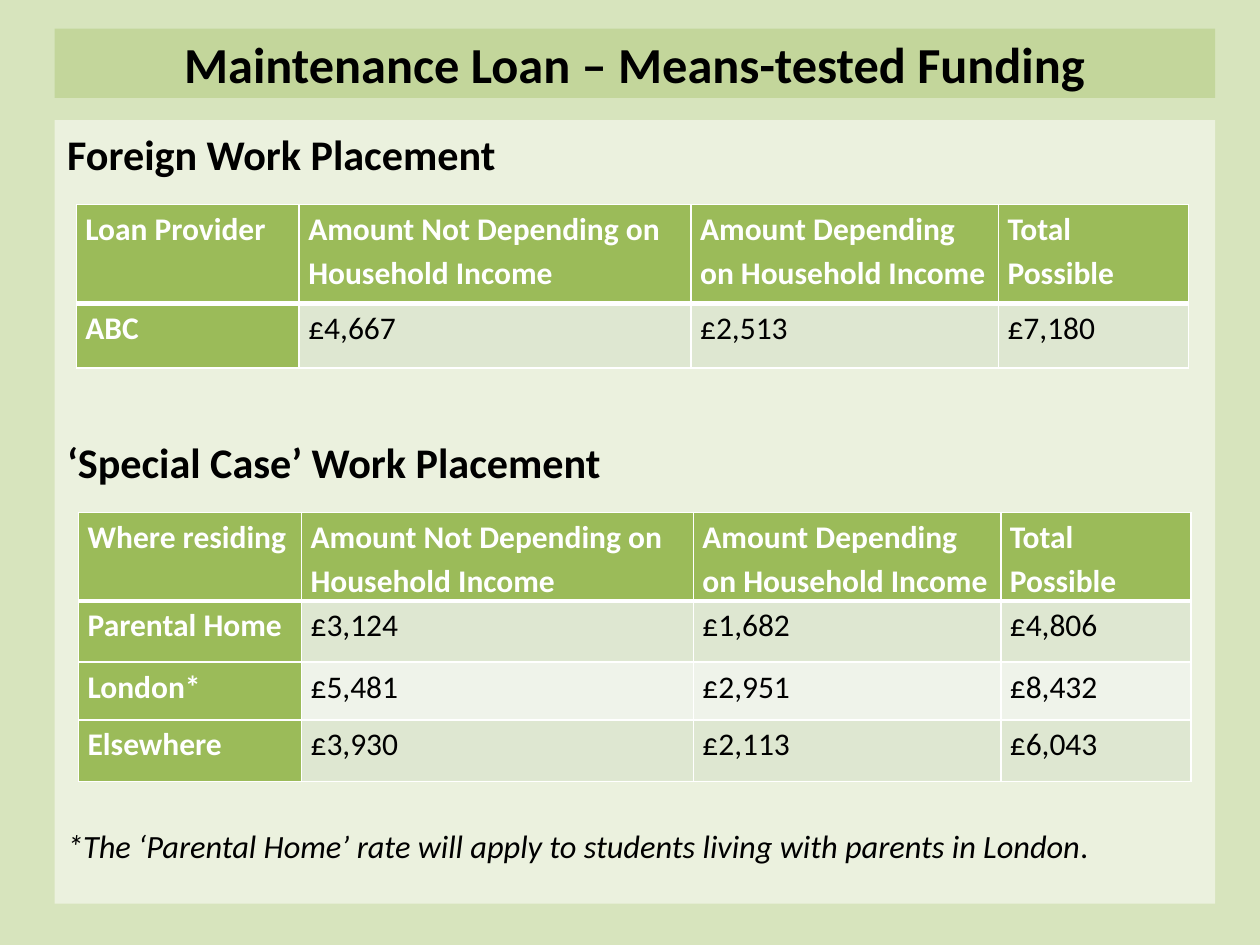
from dataclasses import dataclass

from lxml import etree
from pptx import Presentation
from pptx.dml.color import RGBColor
from pptx.enum.shapes import MSO_SHAPE
from pptx.enum.text import MSO_ANCHOR, PP_ALIGN
from pptx.oxml.ns import qn
from pptx.util import Pt

RECT = MSO_SHAPE.RECTANGLE
TOP, MIDDLE = MSO_ANCHOR.TOP, MSO_ANCHOR.MIDDLE
LEFT, CENTER = PP_ALIGN.LEFT, PP_ALIGN.CENTER

BLACK = RGBColor(0x00, 0x00, 0x00)
WHITE = RGBColor(0xFF, 0xFF, 0xFF)
BACKGROUND = RGBColor(0xD7, 0xE4, 0xBD)
TITLE_FILL = RGBColor(0xC3, 0xD6, 0x9B)
PANEL_FILL = RGBColor(0xEB, 0xF1, 0xDE)
GREEN = RGBColor(0x9B, 0xBB, 0x59)
BANDS = (RGBColor(0xDE, 0xE7, 0xD1), RGBColor(0xEF, 0xF3, 0xEA))

FONT = "Calibri"
COL_WIDTHS = (127.4, 223.9, 175.7, 108.7)
AMOUNT_HEADINGS = (
    "Amount Not Depending on Household Income",
    "Amount Depending on Household Income",
    "Total Possible",
)


@dataclass
class Run:
    text: str
    size: float
    bold: bool = False
    italic: bool = False
    color: RGBColor = BLACK


@dataclass
class Para:
    runs: list[Run]
    before: float = 0
    spacing: float = 1.0
    align: PP_ALIGN = LEFT


@dataclass
class Panel:
    top: float
    height: float
    fill: RGBColor
    anchor: MSO_ANCHOR
    paras: list[Para]


@dataclass
class LoanTable:
    left: float
    top: float
    heights: tuple[float, ...]
    corner: str
    rows: list[tuple[str, ...]]


PANELS = [
    Panel(16.4, 39.6, TITLE_FILL, MIDDLE, [
        Para([Run("Maintenance Loan – Means-tested Funding", 28.8, bold=True)], align=CENTER),
    ]),
    Panel(68.6, 447.8, PANEL_FILL, TOP, [
        Para([Run("Foreign Work Placement", 24.1, bold=True)], spacing=1.04),
        Para([Run("‘Special Case’ Work Placement", 24.1, bold=True)], 146.3, 1.04),
        Para([
            Run("*The ‘Parental Home’ rate will apply to students living with parents in London",
                18.5, italic=True),
            Run(".", 18.5),
        ], 192.5, 1.04),
    ]),
]

TABLES = [
    LoanTable(43.6, 116.9, (56.7, 36.7), "Loan Provider", [
        ("ABC", "£4,667", "£2,513", "£7,180"),
    ]),
    LoanTable(44.9, 292.8, (49.7, 35.1, 33, 35.1), "Where residing", [
        ("Parental Home", "£3,124", "£1,682", "£4,806"),
        ("London*", "£5,481", "£2,951", "£8,432"),
        ("Elsewhere", "£3,930", "£2,113", "£6,043"),
    ]),
]


def write(tf, paras: list[Para]) -> None:
    tf.word_wrap = True
    for i, para in enumerate(paras):
        p = tf.add_paragraph() if i else tf.paragraphs[0]
        p.alignment = para.align
        p.line_spacing = para.spacing
        p.space_before = Pt(para.before)
        for run in para.runs:
            r = p.add_run()
            r.text = run.text
            r.font.name = FONT
            r.font.size = Pt(run.size)
            r.font.bold = run.bold
            r.font.italic = run.italic
            r.font.color.rgb = run.color


def draw_panel(s, panel: Panel) -> None:
    sp = s.shapes.add_shape(RECT, Pt(31.2), Pt(panel.top), Pt(663.1), Pt(panel.height))
    sp.shadow.inherit = False
    sp.fill.solid()
    sp.fill.fore_color.rgb = panel.fill
    sp.line.fill.background()
    sp.text_frame.vertical_anchor = panel.anchor
    write(sp.text_frame, panel.paras)


def set_borders(cell, top: float, bottom: float) -> None:
    tcPr = cell._tc.get_or_add_tcPr()
    sides = (("a:lnL", 1), ("a:lnR", 1), ("a:lnT", top), ("a:lnB", bottom))
    for i, (tag, width) in enumerate(sides):
        ln = etree.Element(qn(tag), w=str(Pt(width)))
        fill = etree.SubElement(ln, qn("a:solidFill"))
        etree.SubElement(fill, qn("a:srgbClr"), val=str(WHITE))
        tcPr.insert(i, ln)


def draw_table(s, spec: LoanTable) -> None:
    rows = [(spec.corner, *AMOUNT_HEADINGS), *spec.rows]
    frame = s.shapes.add_table(len(rows), len(COL_WIDTHS), Pt(spec.left), Pt(spec.top),
                               Pt(sum(COL_WIDTHS)), Pt(sum(spec.heights)))
    table = frame.table
    table.first_col = True
    for col, width in zip(table.columns, COL_WIDTHS):
        col.width = Pt(width)
    for i, (values, height) in enumerate(zip(rows, spec.heights)):
        table.rows[i].height = Pt(height)
        for j, value in enumerate(values):
            cell = table.cell(i, j)
            heading = i == 0 or j == 0
            cell.margin_left = cell.margin_right = Pt(5.2)
            cell.margin_top = cell.margin_bottom = 0
            cell.fill.solid()
            cell.fill.fore_color.rgb = GREEN if heading else BANDS[(i - 1) % 2]
            set_borders(cell, 3 if i == 1 else 1, 3 if i == 0 else 1)
            run = Run(value, 18, bold=heading, color=WHITE if heading else BLACK)
            write(cell.text_frame, [Para([run], spacing=1.15)])


def main() -> None:
    prs = Presentation()
    prs.slide_width, prs.slide_height = Pt(720), Pt(540)
    s = prs.slides.add_slide(prs.slide_layouts[6])
    s.background.fill.solid()
    s.background.fill.fore_color.rgb = BACKGROUND
    for panel in PANELS:
        draw_panel(s, panel)
    for spec in TABLES:
        draw_table(s, spec)
    prs.save("out.pptx")


if __name__ == "__main__":
    main()
